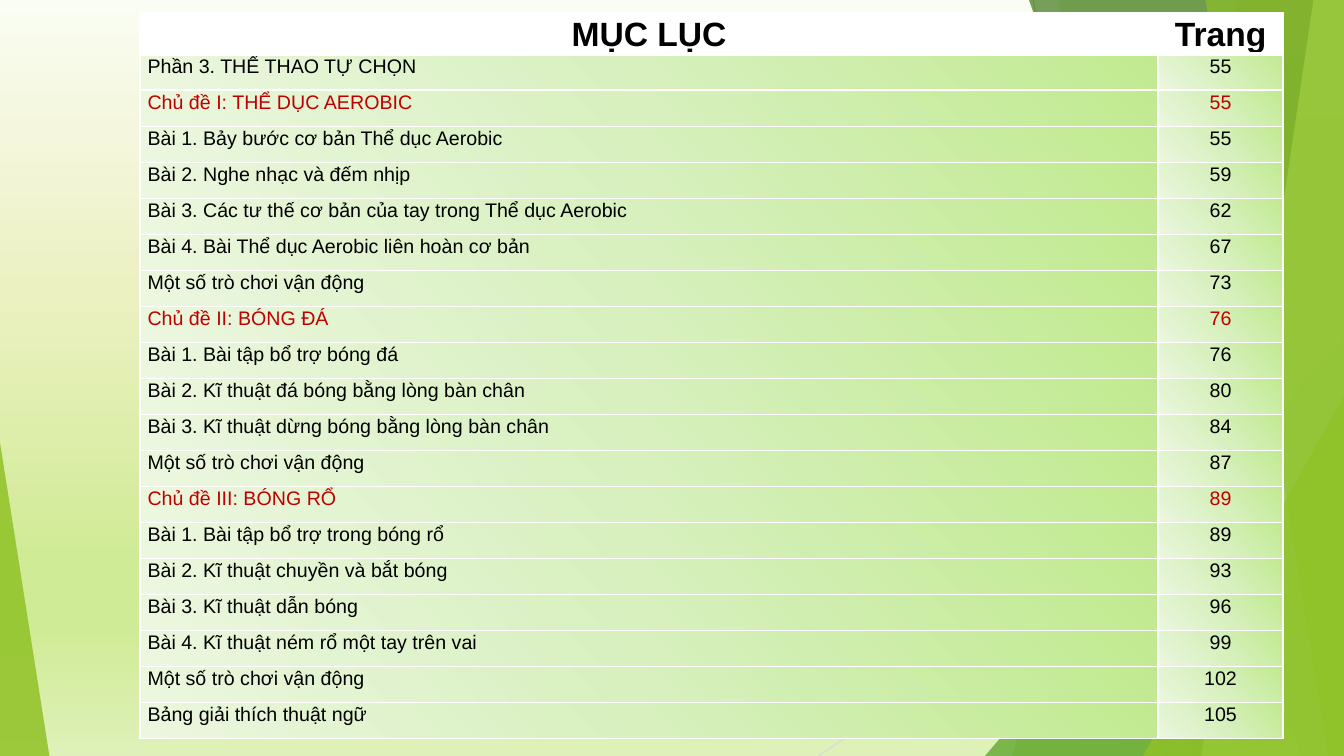
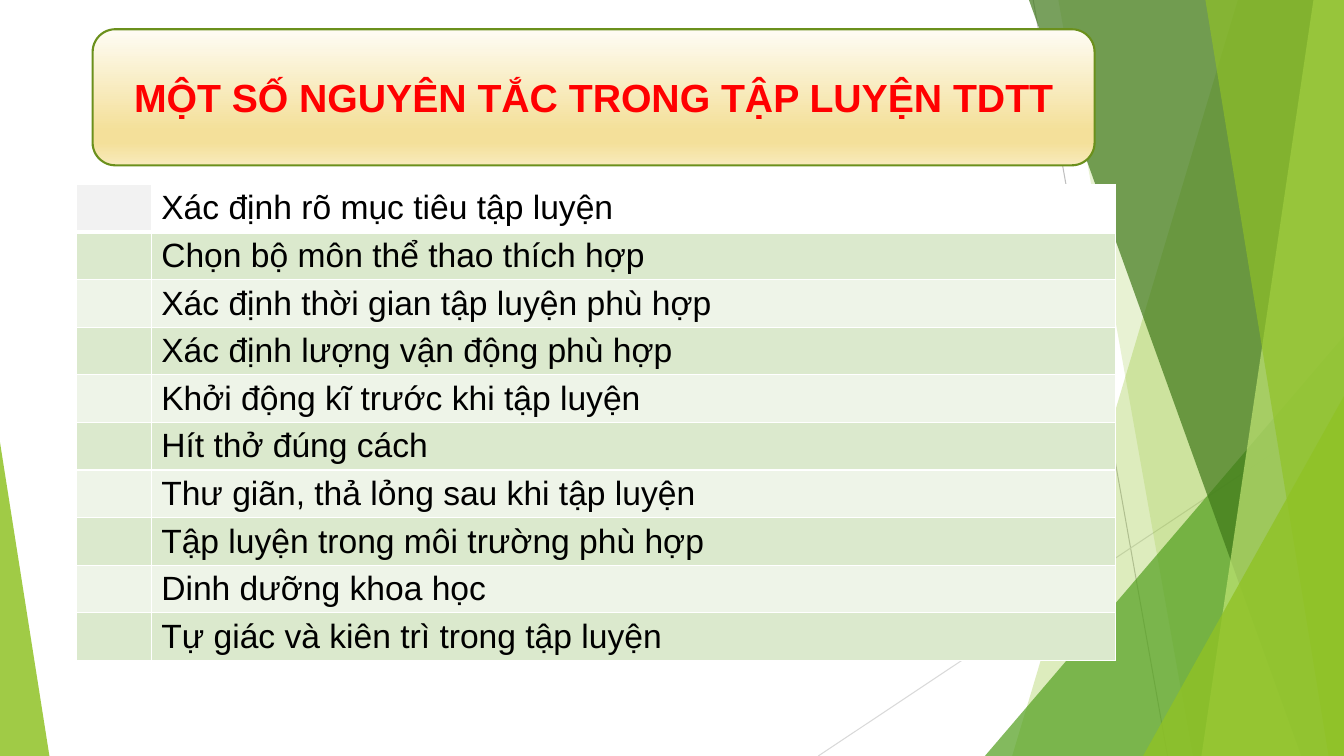
import pptx
import pptx.dml.color
import pptx.enum.shapes
import pptx.enum.text
import pptx.oxml
import pptx.oxml.ns
import pptx.util

Pt = pptx.util.Pt
qn = pptx.oxml.ns.qn
SHAPES = pptx.enum.shapes.MSO_SHAPE
ALIGN = pptx.enum.text.PP_ALIGN
MIDDLE = pptx.enum.text.MSO_ANCHOR.MIDDLE

WIDTH, HEIGHT = 960, 540
FONT = "Arial"
BLACK, WHITE, RED, CHAPTER_RED = "000000", "FFFFFF", "FF0000", "C00000"
LEAF, GRASS, FOREST, LIME = "90C226", "54A021", "3F7819", "C0E474"

# Gradients: stops as (percent, colour)
PAGE_GRADIENT = [(0, "FAFDF3"), (17, "F4F7DD"), (38, "ECF1C2"),
                 (74, "D0EB96"), (83, "D0EB96"), (100, "DFF1B9")]
BANNER_GRADIENT = [(0, "FEFCF4"), (74, "F4E09A"), (83, "F4E09A"), (100, "F8EABB")]
ROW_GRADIENT = [(0, "C1EA90"), (50, "D7F0BD"), (100, "EBF7DF")]
DOWNWARD = '<a:lin ang="5400000" scaled="0"/>'
FROM_TOP_RIGHT = '<a:path path="circle"><a:fillToRect l="100000" b="100000"/></a:path>'

CONTENTS = [
    ("Phần 3. THỂ THAO TỰ CHỌN", 55),
    ("Chủ đề I: THỂ DỤC AEROBIC", 55),
    ("Bài 1. Bảy bước cơ bản Thể dục Aerobic", 55),
    ("Bài 2. Nghe nhạc và đếm nhịp", 59),
    ("Bài 3. Các tư thế cơ bản của tay trong Thể dục Aerobic", 62),
    ("Bài 4. Bài Thể dục Aerobic liên hoàn cơ bản", 67),
    ("Một số trò chơi vận động", 73),
    ("Chủ đề II: BÓNG ĐÁ", 76),
    ("Bài 1. Bài tập bổ trợ bóng đá", 76),
    ("Bài 2. Kĩ thuật đá bóng bằng lòng bàn chân", 80),
    ("Bài 3. Kĩ thuật dừng bóng bằng lòng bàn chân", 84),
    ("Một số trò chơi vận động", 87),
    ("Chủ đề III: BÓNG RỔ", 89),
    ("Bài 1. Bài tập bổ trợ trong bóng rổ", 89),
    ("Bài 2. Kĩ thuật chuyền và bắt bóng", 93),
    ("Bài 3. Kĩ thuật dẫn bóng", 96),
    ("Bài 4. Kĩ thuật ném rổ một tay trên vai", 99),
    ("Một số trò chơi vận động", 102),
    ("Bảng giải thích thuật ngữ", 105),
]

PRINCIPLES = [
    "Xác định rõ mục tiêu tập luyện",
    "Chọn bộ môn thể thao thích hợp",
    "Xác định thời gian tập luyện phù hợp",
    "Xác định lượng vận động phù hợp",
    "Khởi động kĩ trước khi tập luyện",
    "Hít thở đúng cách",
    "Thư giãn, thả lỏng sau khi tập luyện",
    "Tập luyện trong môi trường phù hợp",
    "Dinh dưỡng khoa học",
    "Tự giác và kiên trì trong tập luyện",
]


def xml(tag, inner="", attributes=""):
    return pptx.oxml.parse_xml(
        f'<a:{tag} {pptx.oxml.ns.nsdecls("a")} {attributes}>{inner}</a:{tag}>')


def paint(colour_format, colour):
    colour_format.rgb = pptx.dml.color.RGBColor.from_string(colour)


def fill_solid(fill, colour):
    fill.solid()
    paint(fill.fore_color, colour)


def fill_gradient(fill, element, stops, direction):
    """Swap the first solid fill of the element for a gradient."""
    fill.solid()
    solid = element.find(".//" + qn("a:solidFill"))
    marks = "".join(f'<a:gs pos="{percent * 1000}"><a:srgbClr val="{colour}"/></a:gs>'
                    for percent, colour in stops)
    gradient = xml("gradFill", f"<a:gsLst>{marks}</a:gsLst>{direction}", 'rotWithShape="1"')
    solid.getparent().replace(solid, gradient)


def write(frame, text, size=14, colour=BLACK, bold=False, align=ALIGN.LEFT, spacing=None):
    paragraph = frame.paragraphs[0]
    paragraph.alignment = align
    paragraph.line_spacing = spacing
    run = paragraph.add_run()
    run.text = text
    run.font.name, run.font.size, run.font.bold = FONT, Pt(size), bold
    paint(run.font.color, colour)


# Background decoration
def finish_pane(pane, colour, opacity):
    pane.shadow.inherit = False
    pane.line.fill.background()
    fill_solid(pane.fill, colour)
    tint = pane.element.find(".//" + qn("a:srgbClr"))
    tint.append(xml("alpha", attributes=f'val="{opacity * 1000}"'))


def add_ray(slide, start, end, colour):
    ray = slide.shapes.add_connector(pptx.enum.shapes.MSO_CONNECTOR.STRAIGHT,
                                     *map(Pt, start + end))
    ray.line.width = Pt(0.75)
    paint(ray.line.color, colour)
    ray.element.spPr.append(xml("effectLst"))


def add_shard(slide, top_x, bottom_x, colour, opacity):
    """A full-height pane from a slanted left edge to the right slide edge."""
    outline = slide.shapes.build_freeform(Pt(top_x), Pt(0))
    corners = [(WIDTH, 0), (WIDTH, HEIGHT), (bottom_x, HEIGHT)]
    outline.add_line_segments([(Pt(x), Pt(y)) for x, y in corners], close=True)
    finish_pane(outline.convert_to_shape(), colour, opacity)


def add_corner(slide, left, top, width, apex, colour, opacity):
    """A triangle standing on the bottom slide edge."""
    corner = slide.shapes.add_shape(SHAPES.ISOSCELES_TRIANGLE, Pt(left), Pt(top),
                                    Pt(width), Pt(HEIGHT - top))
    corner.adjustments[0] = apex
    finish_pane(corner, colour, opacity)


def decorate(slide):
    add_ray(slide, (738, 0), (834, HEIGHT), "BFBFBF")
    add_ray(slide, (WIDTH, 290), (584.5, HEIGHT), "D9D9D9")
    add_shard(slide, 884.2, 723, LEAF, 30)
    add_shard(slide, 756, 852, LEAF, 20)
    add_corner(slide, 703.5, 240, 256.5, 1, GRASS, 72)
    add_shard(slide, 735, 929.5, FOREST, 70)
    add_shard(slide, 938.2, 858.2, LIME, 70)
    add_shard(slide, 861, 949, LEAF, 65)
    add_corner(slide, 816.5, 283, 143.5, 1, LEAF, 80)
    add_corner(slide, 0, 316, 35.3, 0, LEAF, 85)


# Tables
def add_grid(slide, left, top, columns, rows):
    """A plain table with white rules and a thicker rule under its first row."""
    grid = slide.shapes.add_table(len(rows), len(columns), Pt(left), Pt(top),
                                  Pt(sum(columns)), Pt(sum(rows))).table
    grid.first_row = grid.horz_banding = False
    for column, width in zip(grid.columns, columns):
        column.width = Pt(width)
    for index, (row, height) in enumerate(zip(grid.rows, rows)):
        row.height = Pt(height)
        rules = {"lnL": 1, "lnR": 1, "lnB": 1}
        if index == 0:
            rules = {"lnL": 1, "lnR": 1, "lnT": 1, "lnB": 3}
        for cell in row.cells:
            properties = cell._tc.get_or_add_tcPr()
            for side, points in rules.items():
                properties.append(xml(
                    side, f'<a:solidFill><a:srgbClr val="{WHITE}"/></a:solidFill>',
                    f'w="{Pt(points)}"'))
    return grid


def set_fill(cell, colour):
    """Fill a cell, keeping its rules ahead of the fill."""
    fill_solid(cell.fill, colour)


def add_contents_table(slide, left, top):
    grid = add_grid(slide, left, top, [727.2, 89.3], [29.6] + [25.75] * len(CONTENTS))
    for index, entry in enumerate([("MỤC LỤC", "Trang")] + CONTENTS):
        is_header = index == 0
        colour = CHAPTER_RED if entry[0].startswith("Chủ đề") else BLACK
        for column, text in enumerate(entry):
            cell = grid.cell(index, column)
            cell.margin_left = cell.margin_right = Pt(5.4)
            cell.margin_top = cell.margin_bottom = 0
            if is_header:
                cell.vertical_anchor = MIDDLE
                set_fill(cell, WHITE)
            else:
                cell.fill.solid()
                properties = cell._tc.tcPr
                solid = properties.find(qn("a:solidFill"))
                properties.remove(solid)
                marks = "".join(
                    f'<a:gs pos="{percent * 1000}"><a:srgbClr val="{stop}"/></a:gs>'
                    for percent, stop in ROW_GRADIENT)
                properties.append(xml("gradFill", f"<a:gsLst>{marks}</a:gsLst>{FROM_TOP_RIGHT}"))
            write(cell.text_frame, str(text), size=24 if is_header else 14, bold=is_header,
                  colour=colour, spacing=1.07,
                  align=ALIGN.CENTER if is_header or column else ALIGN.LEFT)


def add_principles_table(slide, left, top):
    grid = add_grid(slide, left, top, [53.3, 688.6], [34] * len(PRINCIPLES))
    for index, principle in enumerate(PRINCIPLES):
        band = "DBE9CD" if index % 2 else "EEF4E8"
        marker, statement = grid.rows[index].cells
        set_fill(marker, band if index else "F2F2F2")
        set_fill(statement, band if index else WHITE)
        write(statement.text_frame, principle, size=24)


def add_banner(slide, left, top, width, height, title):
    banner = slide.shapes.add_shape(SHAPES.ROUNDED_RECTANGLE, *map(Pt, (left, top, width, height)))
    banner.shadow.inherit = False
    fill_gradient(banner.fill, banner.element, BANNER_GRADIENT, DOWNWARD)
    paint(banner.line.color, "6B901C")
    banner.line.width = Pt(1.5)
    banner.text_frame.word_wrap = True
    banner.text_frame.vertical_anchor = MIDDLE
    write(banner.text_frame, title, size=28, colour=RED, bold=True, align=ALIGN.CENTER)


# Slides
def add_slide(deck):
    slide = deck.slides.add_slide(deck.slide_layouts[6])
    decorate(slide)
    return slide


def build_contents(deck):
    slide = add_slide(deck)
    fill_gradient(slide.background.fill, slide.element, PAGE_GRADIENT, DOWNWARD)
    add_contents_table(slide, 100, 9)


def build_principles(deck):
    slide = add_slide(deck)
    fill_solid(slide.background.fill, WHITE)
    add_banner(slide, 66.2, 20.9, 715.7, 97.2, "MỘT SỐ NGUYÊN TẮC TRONG TẬP LUYỆN TDTT")
    add_principles_table(slide, 54.7, 131.8)


def main():
    deck = pptx.Presentation()
    deck.slide_width, deck.slide_height = Pt(WIDTH), Pt(HEIGHT)
    build_contents(deck)
    build_principles(deck)
    deck.save("out.pptx")


if __name__ == "__main__":
    main()
